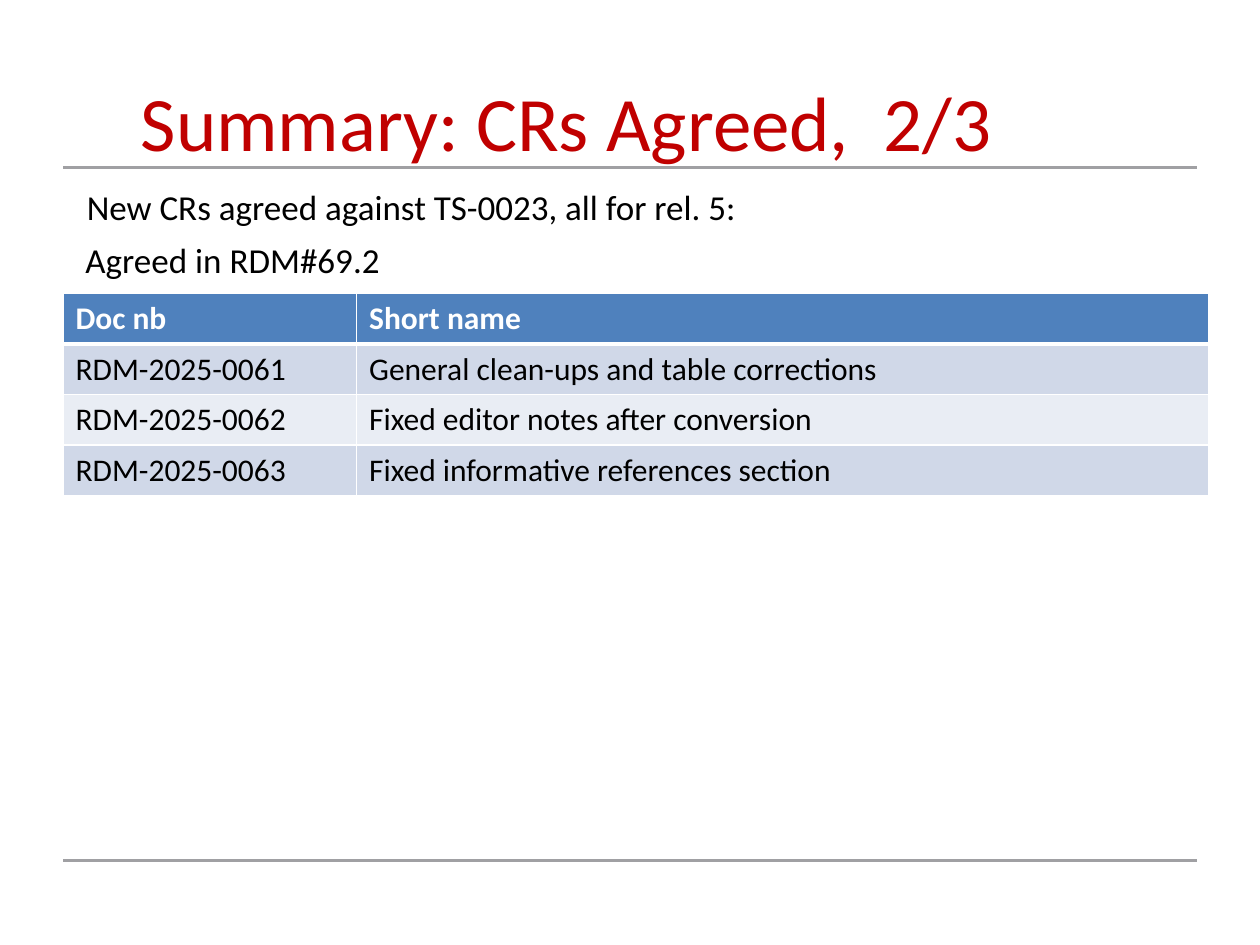
from lxml.etree import SubElement
from pptx import Presentation
from pptx.dml.color import RGBColor
from pptx.enum.shapes import MSO_CONNECTOR as CONN
from pptx.enum.text import MSO_ANCHOR as ANCHOR, PP_ALIGN as ALIGN
from pptx.oxml.ns import qn
from pptx.util import Inches, Pt

W, H = 10, 7.5
MARGIN = 0.05 * W
FONT = "Calibri"
BLACK, WHITE, RED, GREY = "000000", "FFFFFF", "C00000", "A0A0A3"
HEADER, BANDS = "4F81BD", ("D0D8E8", "E9EDF4")

TITLE = "Summary: CRs Agreed,  2/3"
NOTES = [
    ("New CRs agreed against TS-0023, all for rel. 5:", (0.5, 1.42, 8.75, 0.5)),
    ("Agreed in RDM#69.2", (0.49, 1.84, 8.67, 0.41)),
]
ROWS = [
    ("Doc nb", "Short name"),
    ("RDM-2025-0061", "General clean-ups and table corrections"),
    ("RDM-2025-0062", "Fixed editor notes after conversion"),
    ("RDM-2025-0063", "Fixed informative references section"),
]
COLS = (2.33, 6.76)
TABLE_TOP, ROW_H = 2.33, 0.4
RULES = (1.33, 6.83)


def rgb(value):
    return RGBColor.from_string(value)


def style(p, size, color, bold=False):
    for r in p.runs:
        f = r.font
        f.name, f.size, f.bold = FONT, Pt(size), bold
        f.color.rgb = rgb(color)


def add_text(slide, text, box, size, color, anchor=ANCHOR.TOP):
    tf = slide.shapes.add_textbox(*map(Inches, box)).text_frame
    tf.word_wrap = True
    tf.vertical_anchor = anchor
    p = tf.paragraphs[0]
    p.text = text
    style(p, size, color)
    return p


def add_rule(slide, y):
    ln = slide.shapes.add_connector(
        CONN.STRAIGHT, Inches(MARGIN), Inches(y), Inches(W - MARGIN), Inches(y))
    ln.line.color.rgb = rgb(GREY)
    ln.line.width = Pt(1.75)
    SubElement(ln._element.spPr, qn("a:effectLst"))


def set_borders(cell, top, bottom):
    tcPr = cell._tc.get_or_add_tcPr()
    for side, width in (("L", 1), ("R", 1), ("T", top), ("B", bottom)):
        ln = SubElement(tcPr, qn(f"a:ln{side}"), w=str(Pt(width)))
        fill = SubElement(ln, qn("a:solidFill"))
        SubElement(fill, qn("a:srgbClr"), val=WHITE)


def add_crs(slide):
    table = slide.shapes.add_table(
        len(ROWS), len(COLS), Inches(MARGIN), Inches(TABLE_TOP),
        Inches(sum(COLS)), Inches(ROW_H * len(ROWS))).table
    for col, width in zip(table.columns, COLS):
        col.width = Inches(width)
    for i, row in enumerate(ROWS):
        head = i == 0
        for j, text in enumerate(row):
            cell = table.cell(i, j)
            set_borders(cell, 3 if i == 1 else 1, 3 if head else 1)
            cell.fill.solid()
            cell.fill.fore_color.rgb = rgb(HEADER if head else BANDS[(i - 1) % 2])
            cell.text = text
            style(cell.text_frame.paragraphs[0], 18, WHITE if head else BLACK, head)


def main():
    prs = Presentation()
    prs.slide_width, prs.slide_height = Inches(W), Inches(H)
    slide = prs.slides.add_slide(prs.slide_layouts[6])
    for y in RULES:
        add_rule(slide, y)
    title = add_text(slide, TITLE, (0, 0.5, 0.9 * W, 0.92), 44, RED, ANCHOR.MIDDLE)
    title.alignment = ALIGN.CENTER
    for text, box in NOTES:
        p = add_text(slide, text, box, 20, BLACK)
        pPr = p._p.get_or_add_pPr()
        pPr.set("marL", str(Inches(0.09)))
        pPr.set("indent", "0")
    add_crs(slide)
    prs.save("out.pptx")


if __name__ == "__main__":
    main()
